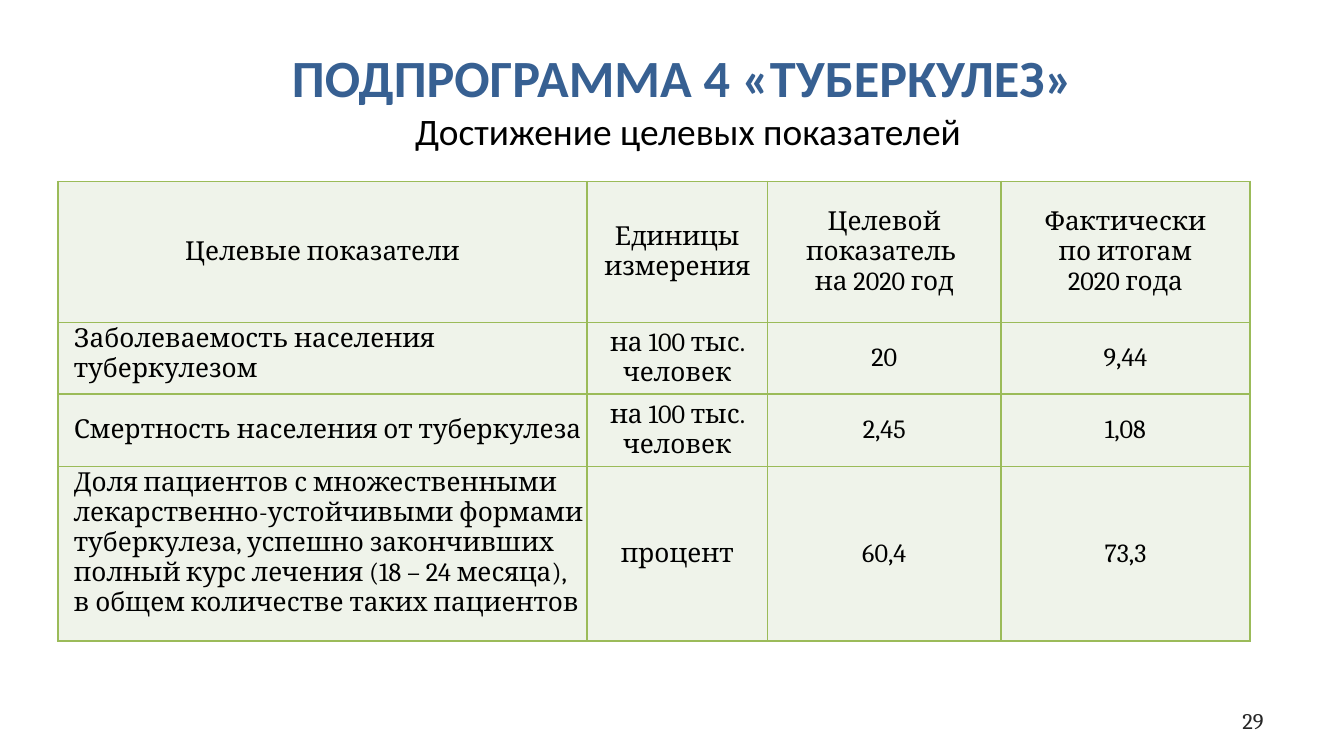
from lxml import etree
from pptx import Presentation
from pptx.dml.color import RGBColor
from pptx.enum.text import MSO_ANCHOR, MSO_AUTO_SIZE, PP_ALIGN
from pptx.oxml.ns import qn
from pptx.util import Inches, Pt

TOP, MIDDLE = MSO_ANCHOR.TOP, MSO_ANCHOR.MIDDLE
LEFT, CENTER, RIGHT = PP_ALIGN.LEFT, PP_ALIGN.CENTER, PP_ALIGN.RIGHT
NO_AUTOFIT = MSO_AUTO_SIZE.NONE
TITLE_ONLY_LAYOUT = 5

COLORS = {
    "title": "376092",
    "text": "000000",
    "page_number": "262626",
    "cell": "EFF3EA",
    "border": "9BBB59",
}

COLUMN_WIDTHS = [3.94, 1.34, 1.74, 1.85]
ROW_HEIGHTS = [1.05, 0.53, 0.54, 1.3]
ROWS = [
    ["Целевые показатели", "Единицы измерения",
     "Целевой показатель \vна 2020 год", "Фактически\v по итогам \v2020 года"],
    ["Заболеваемость населения туберкулезом", "на 100 тыс. человек", "20", "9,44"],
    ["Смертность населения от туберкулеза", "на 100 тыс. человек", "2,45", "1,08"],
    ["Доля пациентов с множественными лекарственно-устойчивыми формами "
     "туберкулеза, успешно закончивших полный курс лечения (18 – 24 месяца), "
     "\vв общем количестве таких пациентов", "процент", "60,4", "73,3"],
]
# Alignment and anchor of the first cell in each row
INDICATOR_STYLES = [(CENTER, MIDDLE), (LEFT, TOP), (LEFT, MIDDLE), (LEFT, TOP)]


def format_run(run, font_name, size, color, bold=False):
    run.font.name = font_name
    run.font.size = Pt(size)
    run.font.bold = bold
    run.font.color.rgb = RGBColor.from_string(COLORS[color])


def add_title(slide):
    title = slide.shapes.title
    title.left, title.top = Inches(0.12), Inches(0.29)
    title.width, title.height = Inches(10), Inches(0.91)
    text_frame = title.text_frame
    text_frame.text = "ПОДПРОГРАММА 4 «ТУБЕРКУЛЕЗ» \vДостижение целевых показателей"
    text_frame.word_wrap = True
    text_frame.auto_size = NO_AUTOFIT
    text_frame.vertical_anchor = TOP
    paragraph = text_frame.paragraphs[0]
    paragraph.alignment = CENTER
    heading, subtitle = paragraph.runs
    format_run(heading, "Calibri", 28, "title", bold=True)
    format_run(subtitle, "Calibri", 20, "text")


def set_borders(cell):
    properties = cell._tc.get_or_add_tcPr()
    for side in ("lnL", "lnR", "lnT", "lnB"):
        line = etree.SubElement(properties, qn(f"a:{side}"), w=str(Pt(1)))
        fill = etree.SubElement(line, qn("a:solidFill"))
        etree.SubElement(fill, qn("a:srgbClr"), val=COLORS["border"])


def fill_cell(cell, text, alignment, anchor, left_margin):
    set_borders(cell)
    cell.fill.solid()
    cell.fill.fore_color.rgb = RGBColor.from_string(COLORS["cell"])
    cell.margin_left = Inches(left_margin)
    cell.margin_right = cell.margin_top = cell.margin_bottom = Inches(0.01)
    cell.vertical_anchor = anchor
    cell.text_frame.text = text
    paragraph = cell.text_frame.paragraphs[0]
    paragraph.alignment = alignment
    for run in paragraph.runs:
        format_run(run, "Cambria", 14, "text")


def add_indicator_table(slide):
    frame = slide.shapes.add_table(
        len(ROWS), len(COLUMN_WIDTHS), Inches(0.43), Inches(1.35),
        Inches(sum(COLUMN_WIDTHS)), Inches(sum(ROW_HEIGHTS)))
    table = frame.table
    table.first_row = table.horz_banding = False
    for column, width in zip(table.columns, COLUMN_WIDTHS):
        column.width = Inches(width)
    for row, height in zip(table.rows, ROW_HEIGHTS):
        row.height = Inches(height)
    for row_index, texts in enumerate(ROWS):
        for column_index, text in enumerate(texts):
            is_indicator = column_index == 0
            alignment, anchor = INDICATOR_STYLES[row_index] if is_indicator else (CENTER, MIDDLE)
            left_margin = 0.12 if is_indicator and row_index > 0 else 0.01
            fill_cell(table.cell(row_index, column_index), text, alignment, anchor, left_margin)


def add_page_number(slide):
    box = slide.shapes.add_textbox(Inches(7.17), Inches(5.21), Inches(2.33), Inches(0.3))
    text_frame = box.text_frame
    text_frame.text = "29"
    text_frame.word_wrap = True
    text_frame.vertical_anchor = MIDDLE
    paragraph = text_frame.paragraphs[0]
    paragraph.alignment = RIGHT
    format_run(paragraph.runs[0], "Cambria", 12, "page_number")


def main():
    presentation = Presentation()
    # Widescreen 16:9
    presentation.slide_width = Inches(10)
    presentation.slide_height = Inches(10) * 9 // 16
    slide = presentation.slides.add_slide(presentation.slide_layouts[TITLE_ONLY_LAYOUT])
    add_title(slide)
    add_indicator_table(slide)
    add_page_number(slide)
    presentation.save("out.pptx")


if __name__ == "__main__":
    main()
